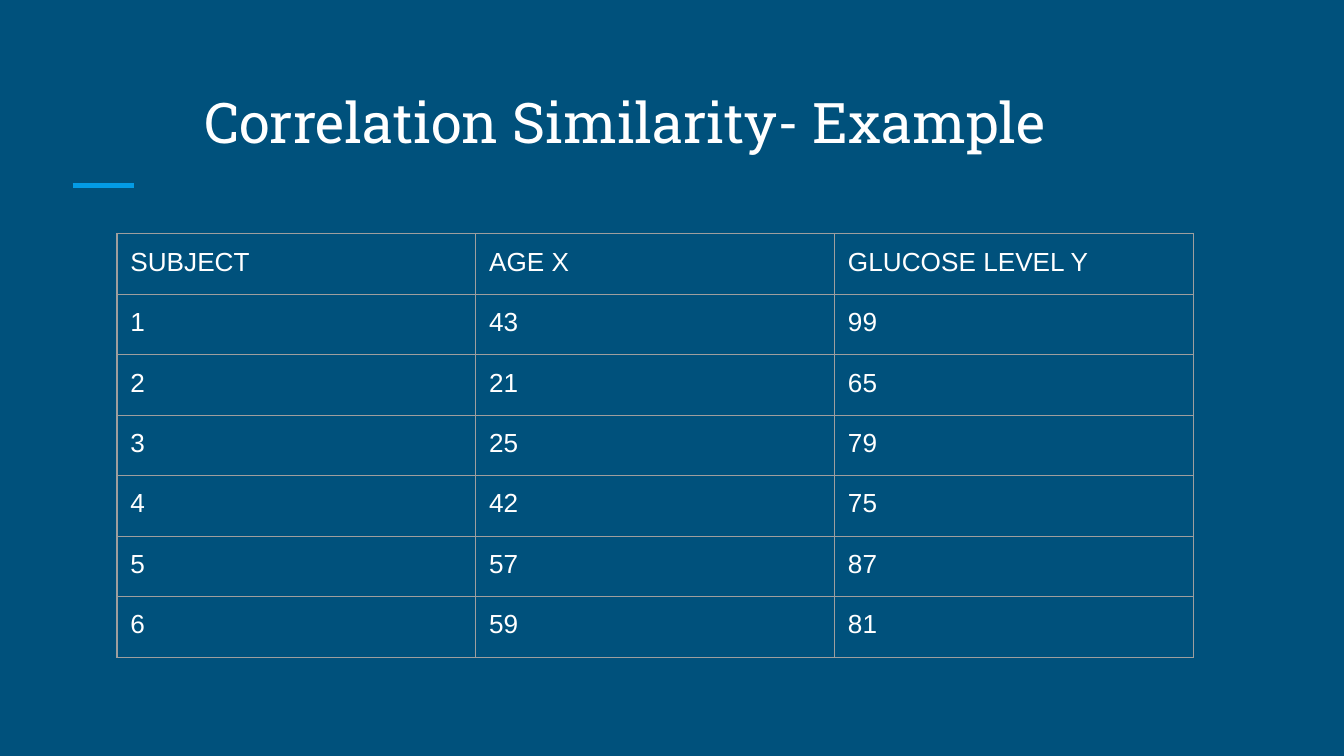
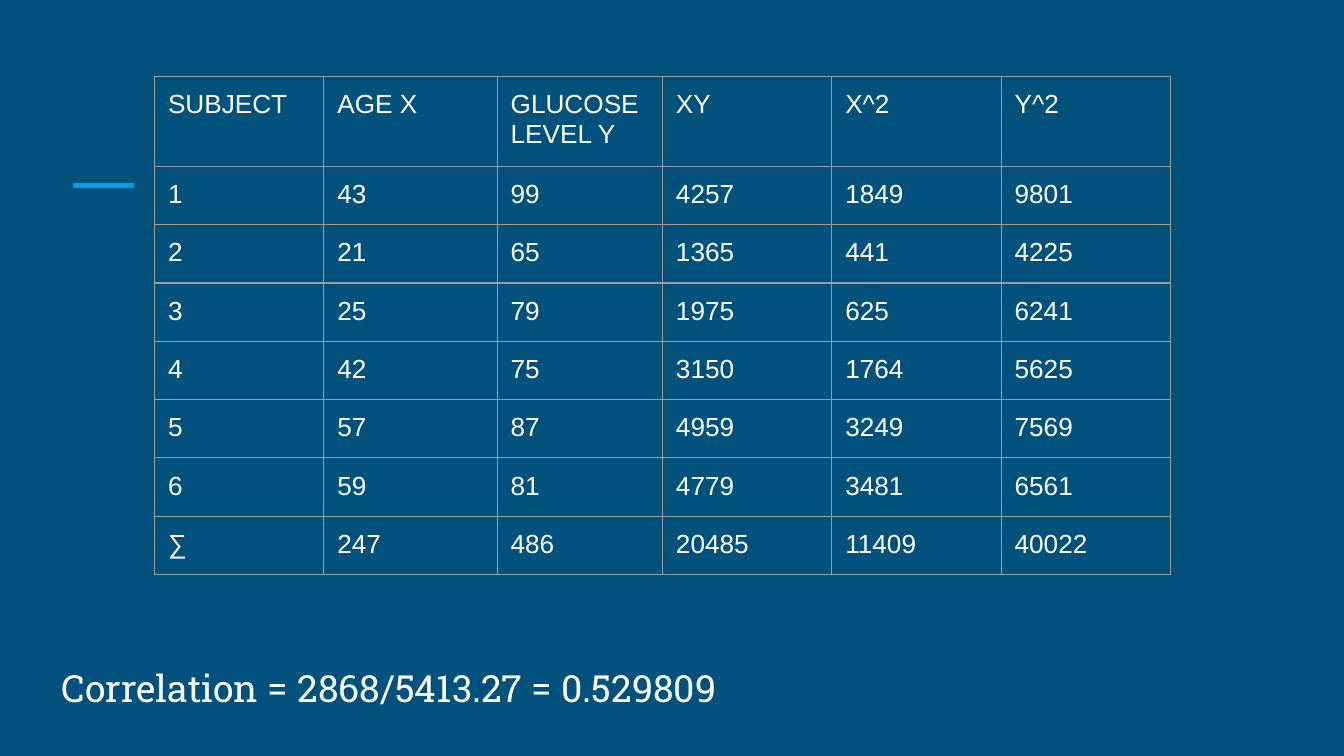
from lxml import etree
from pptx import Presentation
from pptx import util as u
from pptx.dml import color
from pptx.enum import shapes, text
from pptx.oxml import ns

BACKGROUND, ACCENT, WHITE, GRID = "00517C", "039BE5", "FFFFFF", "9E9E9E"
INSETS = {f"margin_{side}": u.Inches(0.1) for side in ("left", "top", "right", "bottom")}


def rgb(value):
    return color.RGBColor.from_string(value)


def write(paragraph, words, font_name, size):
    run = paragraph.add_run()
    run.text = words
    for name, value in {"name": font_name, "size": u.Pt(size)}.items():
        setattr(run.font, name, value)
    run.font.color.rgb = rgb(WHITE)


# Measurements and the columns worked out from them
samples = [(43, 99), (21, 65), (25, 79), (42, 75), (57, 87), (59, 81)]
header = ["SUBJECT", "AGE X", "GLUCOSE LEVEL Y"]
subjects = [[number, *sample] for number, sample in enumerate(samples, 1)]
products = [[*row, row[1] * row[2], row[1] ** 2, row[2] ** 2] for row in subjects]
totals = ["∑"] + [sum(column) for column in list(zip(*products))[1:]]

pages = [
    {
        "title": "\tCorrelation Similarity- Example",
        "title_at": (0.42, 0.5),
        "title_size": 30,
        "table_at": (0.87, 1.74),
        "columns": [2.67] * 3,
        "heights": [0.45] * 7,
        "rows": [header, *subjects],
    },
    {
        "title": "Correlation = 2868/5413.27 = 0.529809",
        "title_at": (0.36, 4.63),
        "title_size": 20,
        "table_at": (1.15, 0.57),
        "columns": [1.26, 1.29, 1.23, 1.26, 1.26, 1.26],
        "heights": [0.66] + [0.34] * 7,
        "rows": [header + ["XY", "X^2", "Y^2"], *products, totals],
    },
]

# Widescreen 16:9
presentation = Presentation()
presentation.slide_width = u.Inches(10)
presentation.slide_height = u.Inches(10) * 9 // 16

# Shared background
background = presentation.slide_master.background.fill
background.solid()
background.fore_color.rgb = rgb(BACKGROUND)

for page in pages:
    slide = presentation.slides.add_slide(presentation.slide_layouts[6])

    # Accent line
    accent = slide.shapes.add_connector(
        shapes.MSO_CONNECTOR.STRAIGHT,
        u.Inches(0.54), u.Inches(1.38), u.Inches(1), u.Inches(1.38))
    accent.line.color.rgb = rgb(ACCENT)
    accent.line.width = u.Pt(3)
    etree.SubElement(accent.line._get_or_add_ln().getparent(), ns.qn("a:effectLst"))

    # Title, with a tab stop one inch in
    left, top = page["title_at"]
    title = slide.shapes.add_textbox(
        u.Inches(left), u.Inches(top), u.Inches(9.15), u.Inches(0.75))
    frame_format = {"word_wrap": True, "vertical_anchor": text.MSO_ANCHOR.BOTTOM, **INSETS}
    for name, value in frame_format.items():
        setattr(title.text_frame, name, value)
    paragraph = title.text_frame.paragraphs[0]
    tabs = etree.SubElement(paragraph._p.get_or_add_pPr(), ns.qn("a:tabLst"))
    etree.SubElement(tabs, ns.qn("a:tab"), pos=str(u.Inches(1)), algn="l")
    write(paragraph, page["title"], "Roboto Slab", page["title_size"])

    # Table
    left, top = page["table_at"]
    rows, columns, heights = page["rows"], page["columns"], page["heights"]
    frame = slide.shapes.add_table(
        len(rows), len(columns), u.Inches(left), u.Inches(top),
        u.Inches(sum(columns)), u.Inches(sum(heights)))
    table = frame.table
    table.first_row = table.horz_banding = False
    for column, width in zip(table.columns, columns):
        column.width = u.Inches(width)
    for row, height, values in zip(table.rows, heights, rows):
        row.height = u.Inches(height)
        for cell, value in zip(row.cells, values):
            for name, inset in INSETS.items():
                setattr(cell, name, inset)
            write(cell.text_frame.paragraphs[0], str(value), "Arial", 14)

            # Cell borders come before the fill in the XML
            properties = cell._tc.get_or_add_tcPr()
            for side in "LRTB":
                border = etree.SubElement(
                    properties, ns.qn(f"a:ln{side}"), w=str(u.Pt(0.75)))
                fill = etree.SubElement(border, ns.qn("a:solidFill"))
                etree.SubElement(fill, ns.qn("a:srgbClr"), val=GRID)
            cell.fill.background()
    frame.width = frame.height = u.Inches(3.28)

presentation.save("out.pptx")
